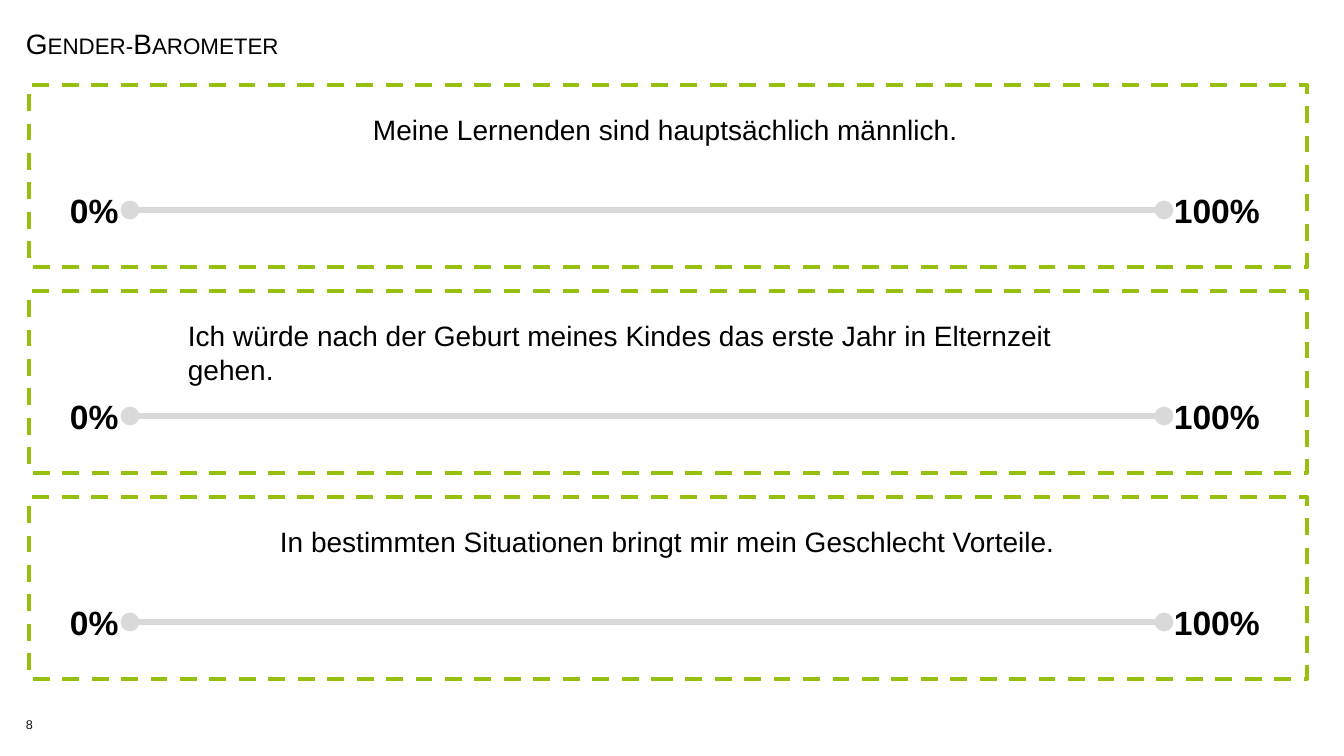
from pptx import Presentation
from pptx.dml.color import RGBColor
from pptx.enum.dml import MSO_LINE
from pptx.enum.shapes import MSO_CONNECTOR, MSO_SHAPE
from pptx.enum.text import MSO_ANCHOR
from pptx.oxml.ns import qn
from pptx.util import Emu, Pt
from lxml.etree import SubElement

THEME = {
    "font": "Arial",
    "text": RGBColor(0x00, 0x00, 0x00),
    "number": RGBColor(0x14, 0x16, 0x16),
    "frame": RGBColor(0x97, 0xBF, 0x0D),
    "scale": RGBColor(0xD9, 0xD9, 0xD9),
    "body_size": 20,
    "label_size": 24,
    "number_size": 9,
}


def px(*lengths):
    return [Emu(round(length * 914400 / 100.8)) for length in lengths]


def add_text(page, area, text, size, color=THEME["text"], bold=False,
             wrap=True, anchor=MSO_ANCHOR.TOP):
    box = page.shapes.add_textbox(*px(*area))
    box.text_frame.word_wrap = wrap
    box.text_frame.vertical_anchor = anchor
    span = box.text_frame.paragraphs[0].add_run()
    span.text = text
    font_format = {"name": THEME["font"], "size": Pt(size), "bold": bold}
    for name, value in font_format.items():
        setattr(span.font, name, value)
    span.font.color.rgb = color
    return box


deck = Presentation()
deck.slide_width, deck.slide_height = px(1344, 756)
page = deck.slides.add_slide(deck.slide_layouts[6])

# Title in small capitals
title = add_text(page, (16, 22, 945, 39), "Gender-Barometer",
                 THEME["body_size"], anchor=MSO_ANCHOR.MIDDLE)
title_para = title.text_frame.paragraphs[0]
title_para.line_spacing = 1.1
title_para.runs[0].font._element.set("cap", "small")

# Page number
number = add_text(page, (26, 705, 50, 38), "8", THEME["number_size"],
                  THEME["number"], anchor=MSO_ANCHOR.MIDDLE)
for side in ("left", "top", "right", "bottom"):
    setattr(number.text_frame, f"margin_{side}", 0)

# Barometers: statement, left edge, width
barometers = [
    ("Meine Lernenden sind hauptsächlich männlich.", 363, 610),
    ("Ich würde nach der Geburt meines Kindes das erste Jahr in Elternzeit gehen.",
     178, 970),
    ("In bestimmten Situationen bringt mir mein Geschlecht Vorteile.", 270, 800),
]
for row, (statement, left, width) in enumerate(barometers):
    top = 85 + 206 * row

    # Dashed frame
    frame = page.shapes.add_shape(MSO_SHAPE.RECTANGLE, *px(29, top, 1278, 182))
    frame.shadow.inherit = False
    frame.fill.background()
    frame.line.color.rgb = THEME["frame"]
    frame.line.width = Pt(3)
    frame.line.dash_style = MSO_LINE.DASH

    # Statement and end labels
    add_text(page, (left, top + 23, width, 44), statement, THEME["body_size"])
    low, high = [
        add_text(page, (label_left, top + 100, label_width, 50), label,
                 THEME["label_size"], bold=True, wrap=False)
        for label, label_left, label_width in (("0%", 60, 70), ("100%", 1164, 107))
    ]

    # Scale with round ends
    scale = page.shapes.add_connector(
        MSO_CONNECTOR.STRAIGHT, *px(130, top + 125, 1164, top + 125))
    scale.begin_connect(low, 3)
    scale.end_connect(high, 1)
    scale.line.color.rgb = THEME["scale"]
    scale.line.width = Pt(4.5)
    for end in ("headEnd", "tailEnd"):
        SubElement(scale.line._get_or_add_ln(), qn(f"a:{end}"), type="oval")
    SubElement(scale._element.spPr, qn("a:effectLst"))

deck.save("out.pptx")
